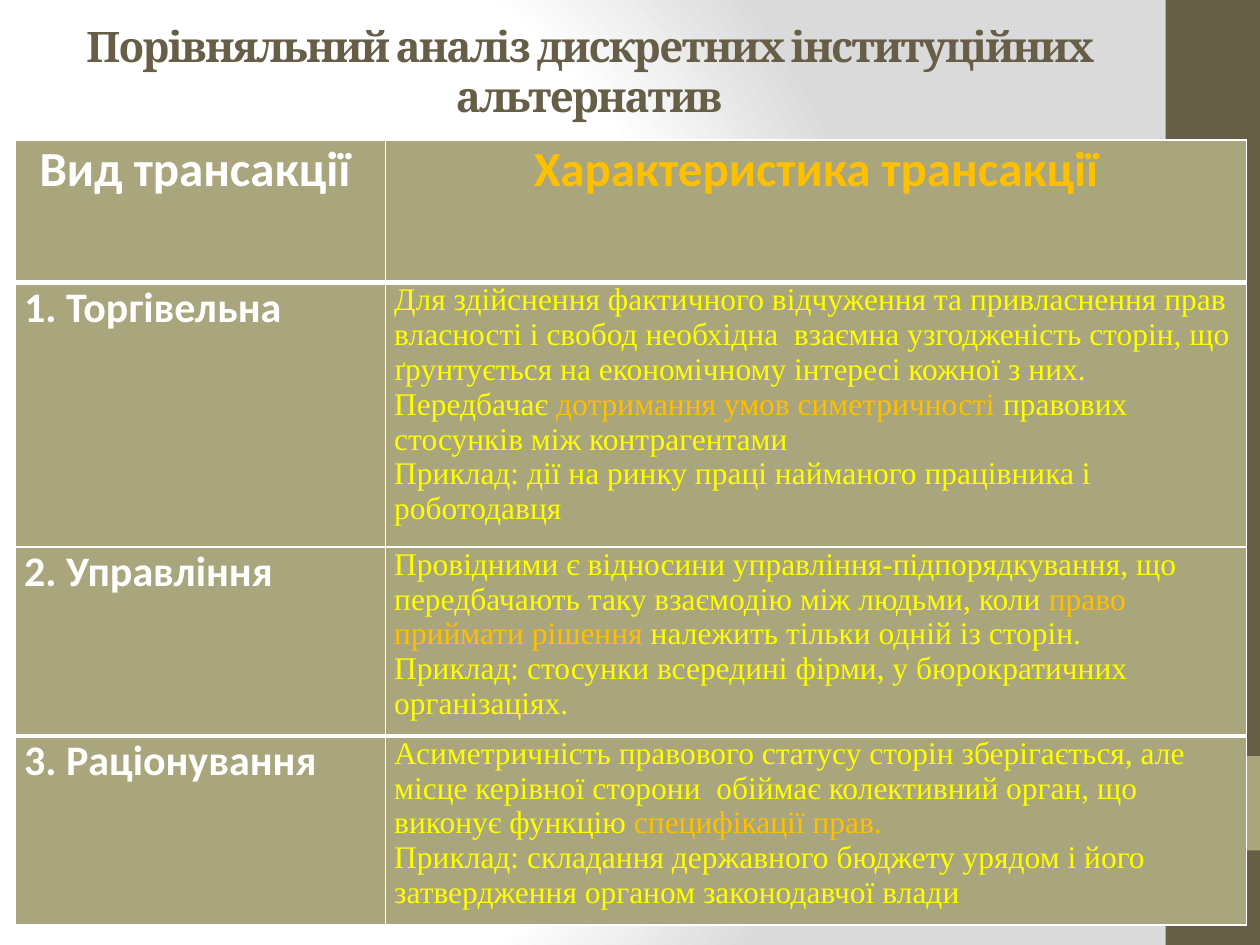
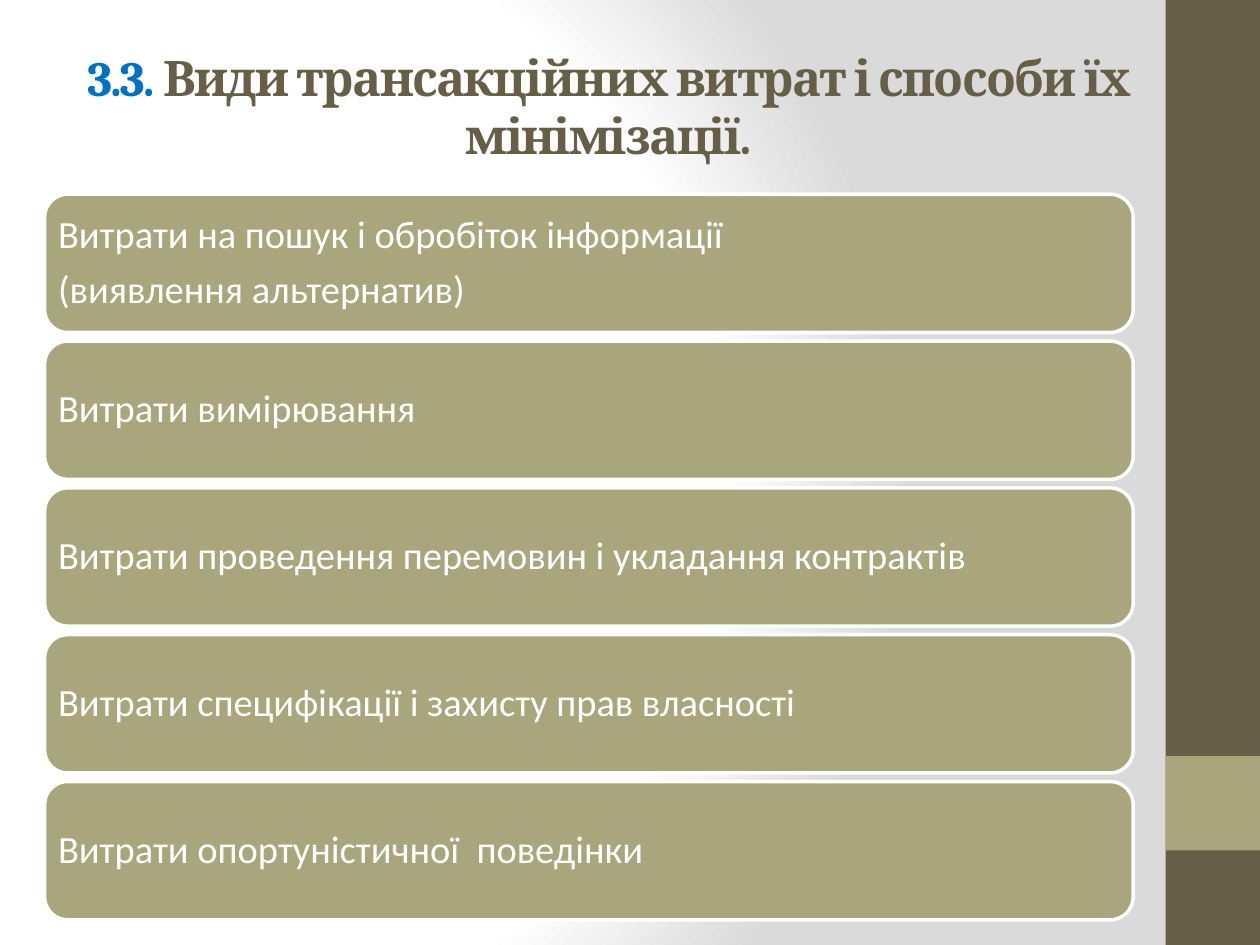
from lxml import etree
from pptx import Presentation
from pptx import util as u
from pptx.dml import color
from pptx.enum import shapes, text
from pptx.oxml import ns, parse_xml

WHITE, GREY = "FFFFFF", "DADADA"
BROWN, OLIVE = "675E47", "A9A57C"
BLUE, GOLD, YELLOW = "0070C0", "FFC000", "FFFF00"
HEADING_FONT, BODY_FONT, DETAIL_FONT = "Cambria", "Calibri", "Times New Roman"
SLIDE_WIDTH, SLIDE_HEIGHT = 720, 540
BAND_LEFT, BAND_WIDTH = 666, 54

COLUMN_WIDTHS = [211.5, 492]
ROW_HEIGHTS = [81.4, 139.5, 99.6, 99.6]
HEADERS = [("Вид трансакції ", WHITE), ("Характеристика трансакції", GOLD)]
TRANSACTIONS = [
    ("1. Торгівельна", [
        [("Для здійснення фактичного відчуження та привласнення прав власності і свобод "
          "необхідна  взаємна узгодженість сторін, що ґрунтується на економічному "
          "інтересі кожної з них.", YELLOW)],
        [("Передбачає ", YELLOW), ("дотримання умов симетричності ", GOLD),
         ("правових стосунків між контрагентами", YELLOW)],
        [("Приклад: дії на ринку праці найманого працівника і роботодавця", YELLOW)],
    ]),
    ("2. Управління", [
        [("Провідними є відносини управління-підпорядкування, що передбачають таку "
          "взаємодію між людьми, коли ", YELLOW), ("право приймати рішення ", GOLD),
         ("належить тільки одній із сторін.", YELLOW)],
        [("Приклад: стосунки всередині фірми, у бюрократичних організаціях.", YELLOW)],
    ]),
    ("3. Раціонування", [
        [("Асиметричність правового статусу сторін зберігається, але місце керівної "
          "сторони  обіймає колективний орган, що виконує функцію ", YELLOW),
         ("специфікації прав.", GOLD)],
        [("Приклад: складання державного бюджету урядом і його затвердження органом "
          "законодавчої влади", YELLOW)],
    ]),
]
COSTS = [
    ["Витрати на пошук і обробіток інформації", "(виявлення альтернатив)"],
    ["Витрати вимірювання"],
    ["Витрати проведення перемовин і укладання контрактів"],
    ["Витрати специфікації і захисту прав власності"],
    ["Витрати опортуністичної  поведінки"],
]


def rgb(value):
    return color.RGBColor.from_string(value)


def paint(target, value):
    target.fill.solid()
    target.fill.fore_color.rgb = rgb(value)


def write(frame, paragraphs, *, size, font, bold=False, align=text.PP_ALIGN.LEFT,
          tracking=None, line_spacing=None, space_after=None):
    for index, spans in enumerate(paragraphs):
        para = frame.add_paragraph() if index else frame.paragraphs[0]
        para.alignment = align
        para.line_spacing = line_spacing
        if space_after is not None:
            para.space_after = u.Pt(space_after)
        for words, shade in spans:
            span = para.add_run()
            span.text = words
            span.font.size = u.Pt(size)
            span.font.name = font
            span.font.bold = bold
            span.font.color.rgb = rgb(shade)
            if tracking is not None:
                span.font._element.set("spc", str(tracking * 100))


def add_block(slide, kind, left, top, width, height, fill):
    block = slide.shapes.add_shape(kind, u.Pt(left), u.Pt(top), u.Pt(width), u.Pt(height))
    block.shadow.inherit = False
    paint(block, fill)
    block.line.fill.background()
    return block


def set_background(slide):
    slide.background.fill.solid()
    solid = slide._element.find(".//" + ns.qn("p:bgPr"))[0]
    stops = "".join(f'<a:gs pos="{place * 1000}"><a:srgbClr val="{shade}"/></a:gs>'
                    for place, shade in [(0, WHITE), (75, WHITE), (100, GREY)])
    gradient = parse_xml(
        f'<a:gradFill {ns.nsdecls("a")} rotWithShape="1"><a:gsLst>{stops}</a:gsLst>'
        '<a:path path="circle"><a:fillToRect l="20000" t="50000" r="100000" b="50000"/>'
        '</a:path></a:gradFill>')
    solid.getparent().replace(solid, gradient)


def add_slide(deck):
    slide = deck.slides.add_slide(deck.slide_layouts[6])
    set_background(slide)
    rectangle = shapes.MSO_SHAPE.RECTANGLE
    add_block(slide, rectangle, BAND_LEFT, 0, BAND_WIDTH, SLIDE_HEIGHT, BROWN)
    add_block(slide, rectangle, BAND_LEFT, 432, BAND_WIDTH, BAND_WIDTH, OLIVE)
    return slide


def add_title(slide, spans, top, width, height, size):
    box = slide.shapes.add_textbox(u.Pt(36.7), u.Pt(top), u.Pt(width), u.Pt(height))
    frame = box.text_frame
    frame.word_wrap = True
    frame.vertical_anchor = text.MSO_ANCHOR.MIDDLE
    write(frame, [spans], size=size, font=HEADING_FONT, bold=True,
          align=text.PP_ALIGN.CENTER, tracking=-1)


def set_borders(cell, top, bottom):
    properties = cell._tc.get_or_add_tcPr()
    widths = {"lnL": 1, "lnR": 1, "lnT": top, "lnB": bottom}
    for index, (side, width) in enumerate(widths.items()):
        line = etree.Element(ns.qn("a:" + side), w=str(u.Pt(width)))
        fill = etree.SubElement(line, ns.qn("a:solidFill"))
        etree.SubElement(fill, ns.qn("a:srgbClr"), val=WHITE)
        properties.insert(index, line)


def add_transaction_table(slide):
    table = slide.shapes.add_table(
        len(ROW_HEIGHTS), len(COLUMN_WIDTHS), u.Pt(8.8), u.Pt(80),
        u.Pt(sum(COLUMN_WIDTHS)), u.Pt(sum(ROW_HEIGHTS))).table
    for column, width in zip(table.columns, COLUMN_WIDTHS):
        column.width = u.Pt(width)
    edges = [1, 3, 1, 3, 1]
    for index, (row, height) in enumerate(zip(table.rows, ROW_HEIGHTS)):
        row.height = u.Pt(height)
        for cell in row.cells:
            cell.margin_left = cell.margin_right = u.Pt(5)
            cell.margin_top = cell.margin_bottom = 0
            paint(cell, OLIVE)
            set_borders(cell, edges[index], edges[index + 1])
    for column, header in enumerate(HEADERS):
        write(table.cell(0, column).text_frame, [[header]], size=28, font=BODY_FONT,
              bold=True, align=text.PP_ALIGN.CENTER)
    for row, (kind, details) in enumerate(TRANSACTIONS, 1):
        write(table.cell(row, 0).text_frame, [[(kind, WHITE)]], size=24,
              font=BODY_FONT, bold=True)
        write(table.cell(row, 1).text_frame, details, size=18, font=DETAIL_FONT)


def add_cost_bar(slide, top, lines):
    bar = add_block(slide, shapes.MSO_SHAPE.ROUNDED_RECTANGLE, 25.5, top, 622, 79, OLIVE)
    bar.line.color.rgb = rgb(WHITE)
    bar.line.width = u.Pt(2)
    frame = bar.text_frame
    frame.word_wrap = True
    frame.vertical_anchor = text.MSO_ANCHOR.MIDDLE
    frame.margin_left = frame.margin_right = u.Pt(3.8)
    write(frame, [[(line, WHITE)] for line in lines], size=22, font=BODY_FONT,
          line_spacing=0.9, space_after=7.7)


def main():
    deck = Presentation()
    deck.slide_width, deck.slide_height = u.Pt(SLIDE_WIDTH), u.Pt(SLIDE_HEIGHT)

    comparison = add_slide(deck)
    add_title(comparison, [("Порівняльний аналіз дискретних інституційних альтернатив", BROWN)],
              15, 600, 51, 24)
    add_transaction_table(comparison)

    costs = add_slide(deck)
    add_title(costs, [("3.3. ", BLUE),
                      ("Види трансакційних витрат і способи їх мінімізації.", BROWN)],
              21, 622, 79, 28)
    for index, lines in enumerate(COSTS):
        add_cost_bar(costs, 111 + 83.9 * index, lines)

    deck.save("out.pptx")


if __name__ == "__main__":
    main()
